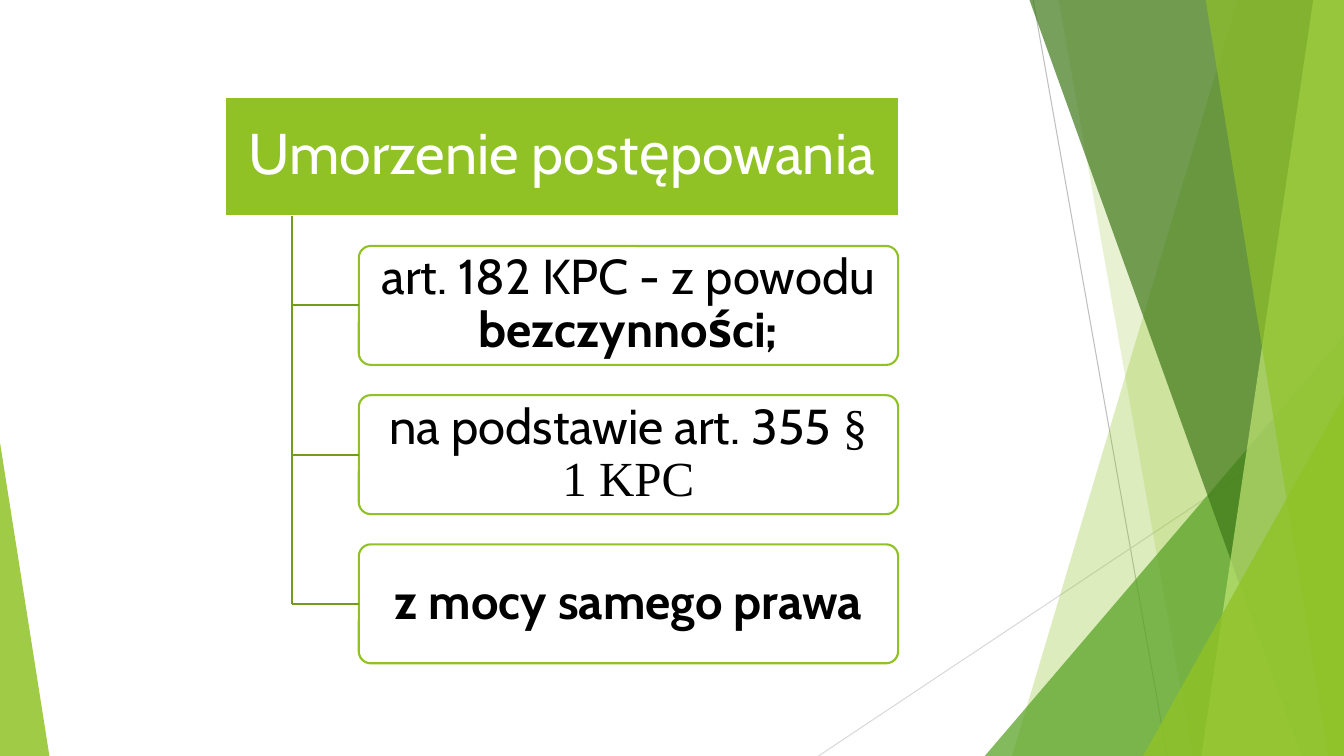
"""Builds a slide showing the three grounds for discontinuing proceedings."""
from dataclasses import dataclass

from lxml import etree
from pptx import Presentation
from pptx.dml.color import RGBColor
from pptx.enum.shapes import MSO_CONNECTOR, MSO_SHAPE
from pptx.enum.text import MSO_ANCHOR, MSO_AUTO_SIZE, PP_ALIGN
from pptx.oxml.ns import qn
from pptx.util import Pt

STRAIGHT = MSO_CONNECTOR.STRAIGHT
TRIANGLE = MSO_SHAPE.ISOSCELES_TRIANGLE
ROUNDED = MSO_SHAPE.ROUNDED_RECTANGLE
MIDDLE = MSO_ANCHOR.MIDDLE
NO_AUTOFIT = MSO_AUTO_SIZE.NONE
CENTER = PP_ALIGN.CENTER
LEFT_SIDE = 1
TITLE_ONLY = 5

COLORS = {
    "lime": "90C226", "green": "54A021", "forest": "3F7819", "pale": "C0E474",
    "branch": "739B1E", "white": "FFFFFF", "black": "000000",
    "gray": "BFBFBF", "silver": "D9D9D9",
}
PAGE_WIDTH, PAGE_HEIGHT = 960, 540
BAND_TOP = -0.72
HEADER_LEFT, HEADER_TOP, HEADER_WIDTH = 160.56, 69.12, 481.68
BOX_LEFT, BOX_TOP, BOX_WIDTH, BOX_HEIGHT = 256.32, 175.7, 385.2, 84.96
BOX_PITCH = 106.56
TRUNK_X = 208.4


@dataclass
class Band:
    """A translucent shape running from a slanted left edge to the page edge."""
    top_x: float
    bottom_x: float
    color: str
    alpha: int


@dataclass
class Corner:
    """A translucent right triangle standing on the bottom of the page."""
    left: float
    top: float
    width: float
    apex: float
    color: str
    alpha: int


@dataclass
class Span:
    """A piece of text with its own weight and font."""
    text: str
    bold: bool = False
    font: str = "Cabin"


BACK_BANDS = [Band(884.16, 722.88, "lime", 30), Band(756, 851.76, "lime", 20)]
FRONT_BANDS = [
    Band(735.12, 929.52, "forest", 70),
    Band(938.16, 858.24, "pale", 70),
    Band(861.12, 948.96, "lime", 65),
]
BACK_CORNER = Corner(703.44, 239.76, 256.56, 1, "green", 72)
FRONT_CORNERS = [
    Corner(816.48, 282.96, 143.52, 1, "lime", 80),
    Corner(0, 316.08, 35.28, 0, "lime", 85),
]
GROUNDS = [
    [Span("art. 182 KPC - z powodu "), Span("bezczynności;", bold=True)],
    [Span("na podstawie art. 355 "), Span("§ 1 KPC", font="Times New Roman")],
    [Span("z mocy samego prawa", bold=True)],
]


def color_of(name: str) -> RGBColor:
    """Return the named colour."""
    return RGBColor.from_string(COLORS[name])


def paint(shape, color: str, alpha: int = 100) -> None:
    """Fill a shape, with opacity in percent."""
    shape.fill.solid()
    shape.fill.fore_color.rgb = color_of(color)
    if alpha < 100:
        fill = shape.fill._xPr.find(qn("a:solidFill"))
        etree.SubElement(fill[0], qn("a:alpha"), val=str(alpha * 1000))


def outline(shape, color: str, width: float) -> None:
    """Set the line colour and width of a shape or connector."""
    shape.line.color.rgb = color_of(color)
    shape.line.width = Pt(width)


def draw_line(page, start: tuple, end: tuple, color: str, width: float):
    """Draw a straight connector without a shadow."""
    line = page.shapes.add_connector(STRAIGHT, *map(Pt, start + end))
    outline(line, color, width)
    etree.SubElement(line._element.spPr, qn("a:effectLst"))
    return line


def draw_band(page, band: Band) -> None:
    """Draw one slanted band on the right of the page."""
    builder = page.shapes.build_freeform(Pt(band.top_x), Pt(BAND_TOP))
    corners = [(PAGE_WIDTH, BAND_TOP), (PAGE_WIDTH, PAGE_HEIGHT),
               (band.bottom_x, PAGE_HEIGHT)]
    builder.add_line_segments([(Pt(x), Pt(y)) for x, y in corners])
    shape = builder.convert_to_shape()
    shape.shadow.inherit = False
    paint(shape, band.color, band.alpha)
    shape.line.fill.background()


def draw_corner(page, corner: Corner) -> None:
    """Draw one corner triangle."""
    shape = page.shapes.add_shape(
        TRIANGLE, Pt(corner.left), Pt(corner.top), Pt(corner.width),
        Pt(PAGE_HEIGHT - corner.top))
    shape.adjustments[0] = corner.apex
    shape.shadow.inherit = False
    paint(shape, corner.color, corner.alpha)
    shape.line.fill.background()


def prepare_frame(shape, side: float, edge: float):
    """Set up a centred text frame and return its paragraph."""
    frame = shape.text_frame
    frame.word_wrap = True
    frame.auto_size = NO_AUTOFIT
    frame.vertical_anchor = MIDDLE
    frame.margin_left = frame.margin_right = Pt(side)
    frame.margin_top = frame.margin_bottom = Pt(edge)
    para = frame.paragraphs[0]
    para.alignment = CENTER
    para.line_spacing = 0.9
    return para


def add_text(para, text: str, *, size: float, color: str,
             font: str = "Cabin", bold: bool = False) -> None:
    """Add a formatted run to a paragraph."""
    run = para.add_run()
    run.text = text
    run.font.size = Pt(size)
    run.font.name = font
    run.font.bold = bold
    run.font.color.rgb = color_of(color)


def draw_header(page) -> None:
    """Turn the title placeholder into the rounded header box."""
    title = page.shapes.title
    title.left, title.top = Pt(HEADER_LEFT), Pt(HEADER_TOP)
    title.width, title.height = Pt(HEADER_WIDTH), Pt(BOX_HEIGHT)
    geometry = etree.SubElement(
        title._element.spPr, qn("a:prstGeom"), prst="roundRect")
    guides = etree.SubElement(geometry, qn("a:avLst"))
    etree.SubElement(guides, qn("a:gd"), name="adj", fmla="val 10000")
    paint(title, "lime")
    outline(title, "white", 1.5)
    para = prepare_frame(title, 9, 6.8)
    add_text(para, "Umorzenie postępowania", size=41, color="white")


def draw_ground(page, top: float, spans: list[Span]) -> None:
    """Draw one ground as a box with its branch from the trunk."""
    box = page.shapes.add_shape(
        ROUNDED, Pt(BOX_LEFT), Pt(top), Pt(BOX_WIDTH), Pt(BOX_HEIGHT))
    box.adjustments[0] = 0.1
    box.shadow.inherit = False
    paint(box, "white", 90)
    outline(box, "lime", 1.5)
    para = prepare_frame(box, 7.5, 6.1)
    for span in spans:
        add_text(para, span.text, size=35, color="black",
                 font=span.font, bold=span.bold)
    middle = top + BOX_HEIGHT / 2
    branch = draw_line(page, (TRUNK_X, middle), (BOX_LEFT, middle), "branch", 1.5)
    branch.end_connect(box, LEFT_SIDE)


def main() -> None:
    """Build and save the deck."""
    deck = Presentation()
    deck.slide_width, deck.slide_height = Pt(PAGE_WIDTH), Pt(PAGE_HEIGHT)
    page = deck.slides.add_slide(deck.slide_layouts[TITLE_ONLY])
    draw_line(page, (738, 0), (833.76, PAGE_HEIGHT), "gray", 0.75)
    draw_line(page, (PAGE_WIDTH, 290.16), (584.64, PAGE_HEIGHT), "silver", 0.75)
    for band in BACK_BANDS:
        draw_band(page, band)
    draw_corner(page, BACK_CORNER)
    for band in FRONT_BANDS:
        draw_band(page, band)
    for corner in FRONT_CORNERS:
        draw_corner(page, corner)
    draw_header(page)
    tops = [BOX_TOP + row * BOX_PITCH for row in range(len(GROUNDS))]
    draw_line(page, (TRUNK_X, HEADER_TOP + BOX_HEIGHT),
              (TRUNK_X, tops[-1] + BOX_HEIGHT / 2), "branch", 1.5)
    for top, spans in zip(tops, GROUNDS):
        draw_ground(page, top, spans)
    deck.save("out.pptx")


if __name__ == "__main__":
    main()
